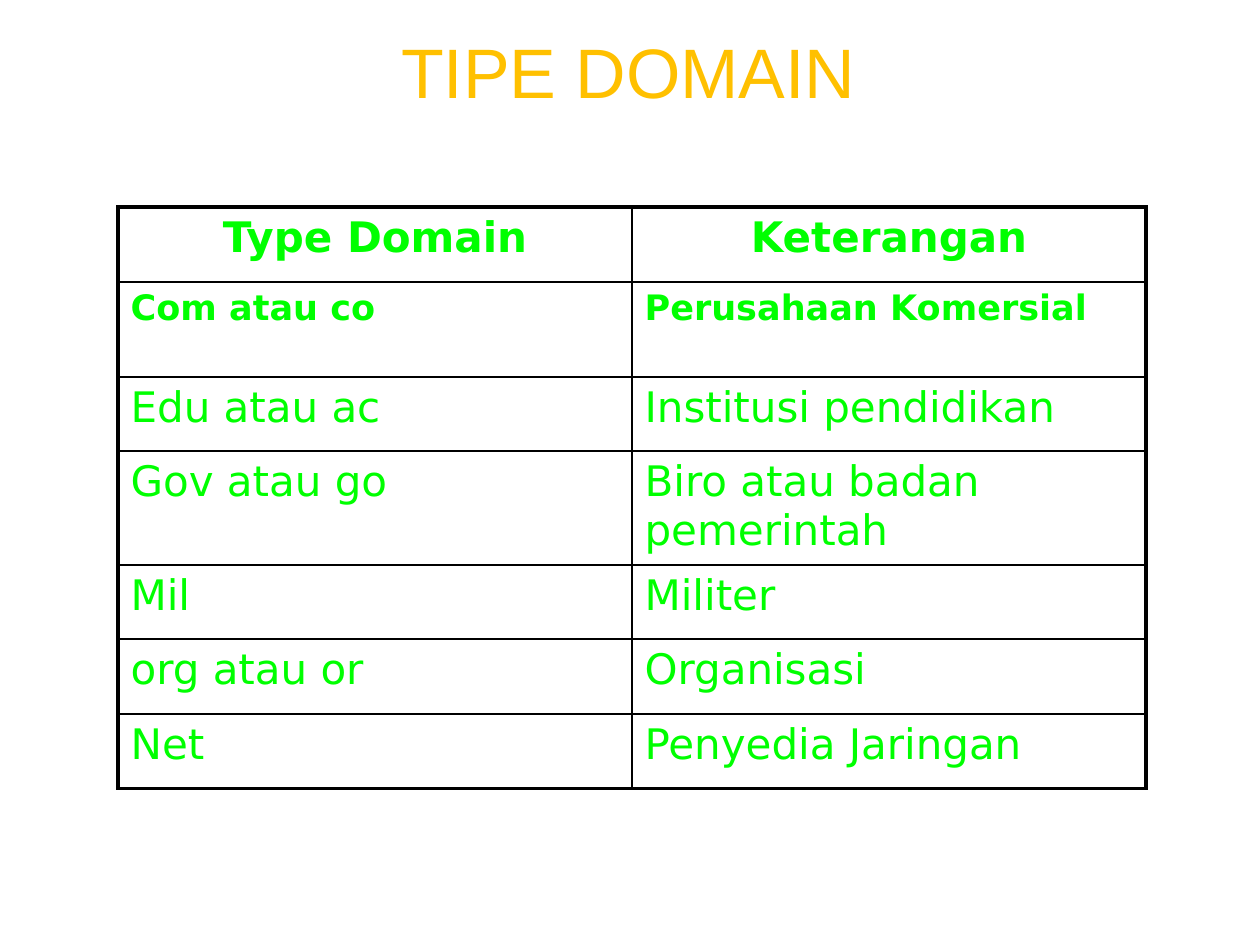
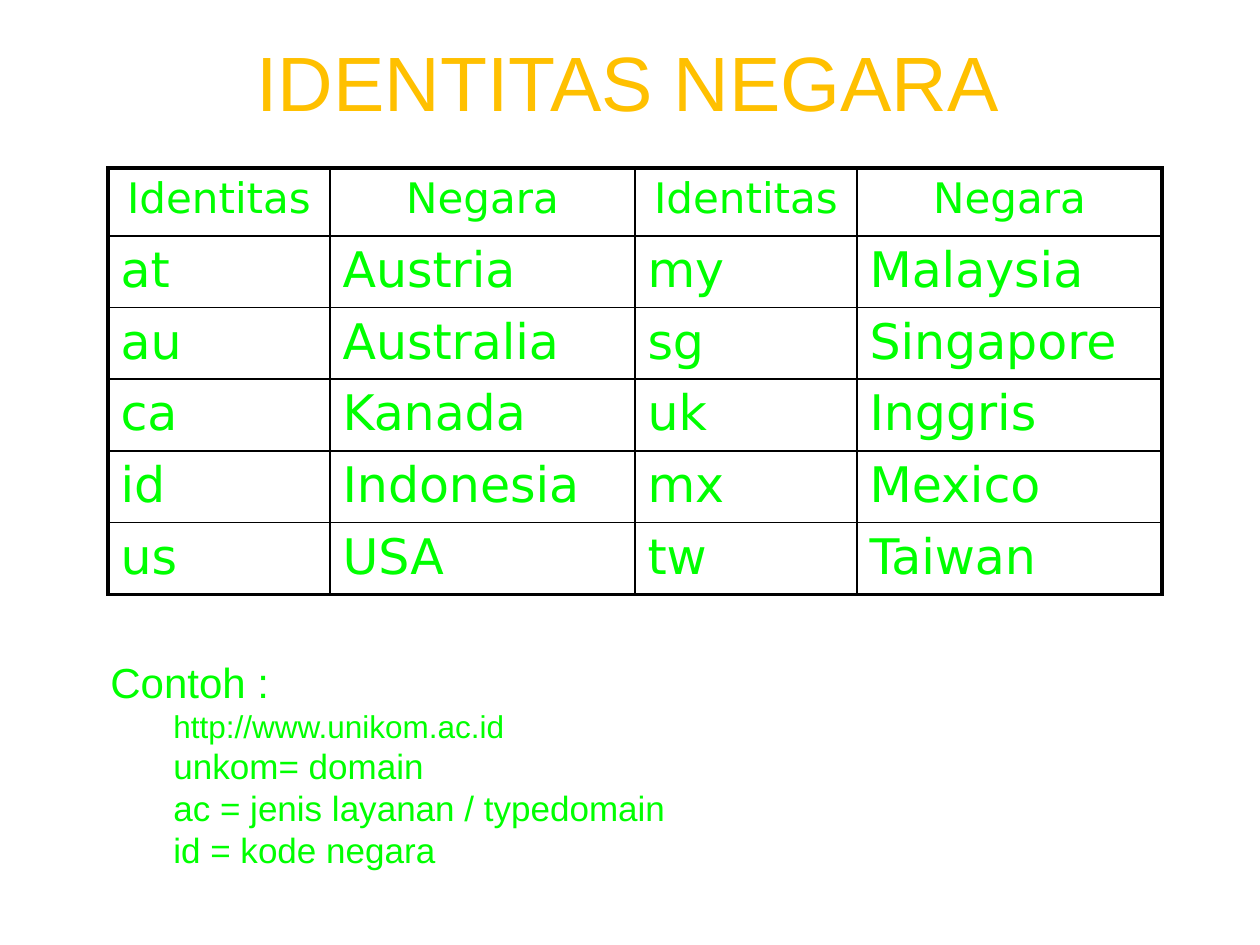
from lxml import etree
from pptx import Presentation
from pptx.dml.color import RGBColor
from pptx.enum.text import MSO_ANCHOR, PP_ALIGN
from pptx.oxml.ns import qn
from pptx.util import Pt

MIDDLE = MSO_ANCHOR.MIDDLE
CENTER = PP_ALIGN.CENTER
LEFT = PP_ALIGN.LEFT
GOLD, GREEN, BLACK = "FFC000", "00FF00", "000000"
SANS, WIDE = "Arial", "DejaVu Sans"
THIN, THICK = 1, 2.25
INDENT = 63

TYPES = [
    ["Type Domain", "Keterangan"],
    ["Com atau co", "Perusahaan Komersial"],
    ["Edu atau ac", "Institusi pendidikan"],
    ["Gov atau go", "Biro atau badan pemerintah"],
    ["Mil", "Militer"],
    ["org atau or", "Organisasi"],
    ["Net", "Penyedia Jaringan"],
]
LANDS = [
    ["Identitas", "Negara"] * 2,
    ["at", "Austria", "my", "Malaysia"],
    ["au", "Australia", "sg", "Singapore"],
    ["ca", "Kanada", "uk", "Inggris"],
    ["id", "Indonesia", "mx", "Mexico"],
    ["us", "USA", "tw", "Taiwan"],
]
NOTES = [
    ("Contoh :", 24, 0),
    ("http://www.unikom.ac.id", 18, 1),
    ("unkom= domain", 20, 1),
    ("ac = jenis layanan / typedomain", 20, 1),
    ("id = kode negara", 20, 1),
]


def px(num):
    """Turn pixels into EMU."""
    return round(num * 914400 / 126)


def paint(code):
    """Turn a hex string into a colour."""
    return RGBColor.from_string(code)


def style(para, size, face, code, bold=False):
    """Format every run of a paragraph."""
    for run in para.runs:
        run.font.size = Pt(size)
        run.font.name = face
        run.font.bold = bold
        run.font.color.rgb = paint(code)


def add_box(slide, box):
    """Add a wrapping text box and return its frame."""
    frame = slide.shapes.add_textbox(*map(px, box)).text_frame
    frame.word_wrap = True
    return frame


def add_title(slide, box, text, size):
    """Add the centred slide title."""
    frame = add_box(slide, box)
    frame.vertical_anchor = MIDDLE
    frame.text = text
    para = frame.paragraphs[0]
    para.alignment = CENTER
    style(para, size, SANS, GOLD)


def add_rule(cell, index, side, width):
    """Draw one border of a cell."""
    line = etree.Element(qn(f"a:ln{side}"), w=str(Pt(width)))
    fill = etree.SubElement(line, qn("a:solidFill"))
    etree.SubElement(fill, qn("a:srgbClr"), val=BLACK)
    cell._tc.get_or_add_tcPr().insert(index, line)


def add_grid(slide, spot, cols, rows, data, looks):
    """Add a table with a thick frame; looks gives size and bold per row."""
    size = sum(cols), sum(rows)
    frame = slide.shapes.add_table(len(rows), len(cols), *map(px, (*spot, *size)))
    table = frame.table
    table.first_row = table.horz_banding = False
    for col, width in zip(table.columns, cols):
        col.width = px(width)
    for row, height in zip(table.rows, rows):
        row.height = px(height)
    for r, (words, look) in enumerate(zip(data, looks)):
        for c, word in enumerate(words):
            cell = table.cell(r, c)
            cell.text = word
            cell.fill.background()
            para = cell.text_frame.paragraphs[0]
            para.alignment = LEFT if r else CENTER
            style(para, look[0], WIDE, GREEN, look[1])
            edges = {"L": c == 0, "R": c == len(cols) - 1,
                     "T": r == 0, "B": r == len(rows) - 1}
            for i, (side, outer) in enumerate(edges.items()):
                add_rule(cell, i, side, THICK if outer else THIN)


def add_notes(slide, box, notes):
    """Add the example lines, indented by level."""
    frame = add_box(slide, box)
    frame.text = "\n".join(note[0] for note in notes)
    for para, (_, size, level) in zip(frame.paragraphs, notes):
        para.level = level
        para._p.get_or_add_pPr().set("marL", str(px(INDENT * level)))
        style(para, size, SANS, GREEN)


def type_slide(slide):
    """Build the slide of domain types."""
    add_title(slide, (60, 14, 1137, 113), "TIPE DOMAIN", 40)
    looks = [(24, True), (20, True)] + [(24, False)] * 5
    rows = [75, 95, 74, 114, 74, 75, 75]
    add_grid(slide, (118, 207), [514] * 2, rows, TYPES, looks)


def land_slide(slide):
    """Build the slide of country codes."""
    add_title(slide, (60, 14, 1137, 134), "IDENTITAS NEGARA", 44)
    looks = [(24, False)] + [(28, False)] * 5
    rows = [68, 71, 71, 72, 71, 72]
    add_grid(slide, (108, 168), [222, 305] * 2, rows, LANDS, looks)
    add_notes(slide, (98, 650, 630, 229), NOTES)


def main():
    """Build and save the deck."""
    deck = Presentation()
    deck.slide_width, deck.slide_height = px(1260), px(945)
    for build in (type_slide, land_slide):
        build(deck.slides.add_slide(deck.slide_layouts[6]))
    deck.save("out.pptx")


if __name__ == "__main__":
    main()
